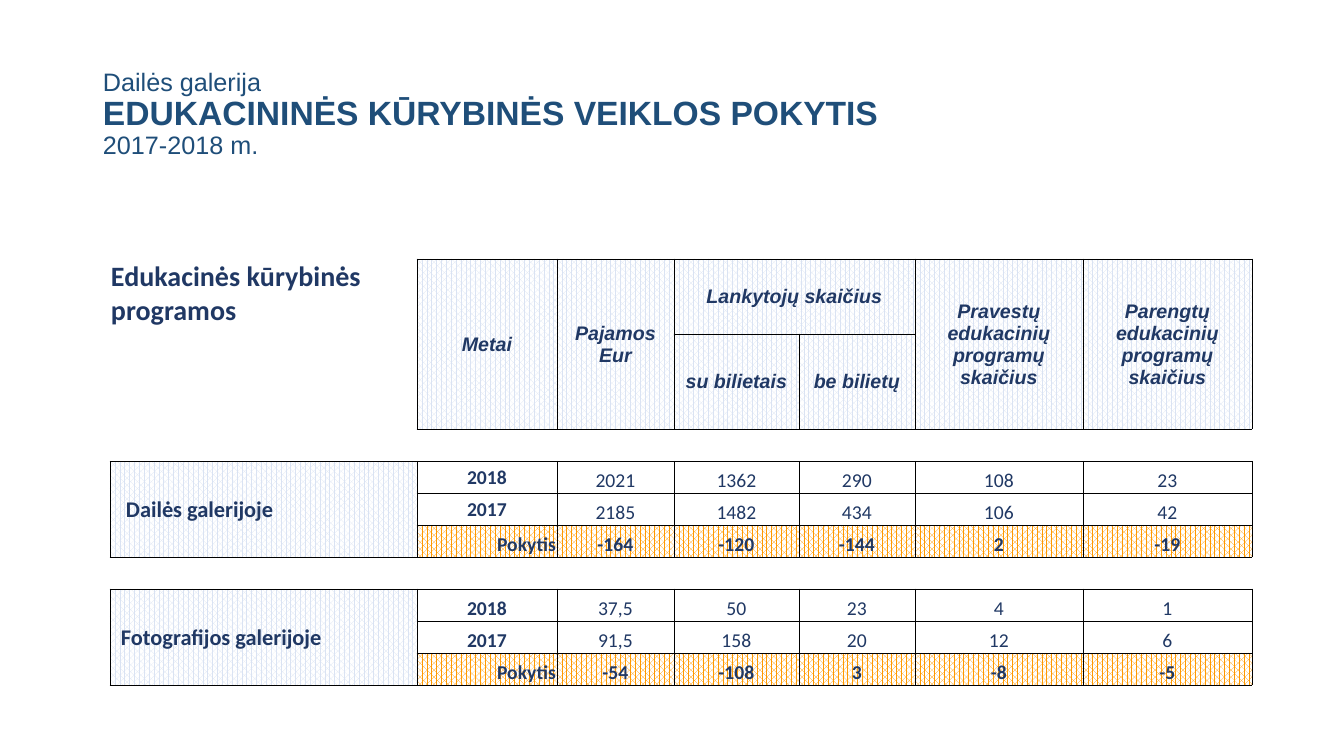
import dataclasses

import lxml.etree
import pptx
import pptx.dml.color
import pptx.enum.dml
import pptx.enum.text
import pptx.oxml.ns
import pptx.util

ALIGN = pptx.enum.text.PP_ALIGN
ANCHOR = pptx.enum.text.MSO_ANCHOR


@dataclasses.dataclass(frozen=True)
class Theme:
    heading_font: str = "Arial"
    body_font: str = "Calibri"
    title_color: str = "1F4E79"
    text_color: str = "203864"
    label_pattern: str = "DAE3F3"
    change_pattern: str = "FF9900"
    paper: str = "FFFFFF"
    border: str = "000000"
    border_width: float = 0.5
    title_size: int = 24
    subtitle_size: int = 18
    section_size: int = 20
    gallery_size: int = 16
    cell_size: int = 14


THEME = Theme()

TITLE_LINES = [
    ("Dailės galerija", THEME.subtitle_size, False),
    ("EDUKACININĖS KŪRYBINĖS VEIKLOS POKYTIS", THEME.title_size, True),
    ("2017-2018 m.", THEME.subtitle_size, False),
]
COLUMN_WIDTHS = [307, 140, 117, 125, 116, 168, 169]
ROW_HEIGHTS = [75, 49] + [32] * 8

# Row, column, last row, last column, text
HEADERS = [
    (0, 1, 1, 1, "Metai"),
    (0, 2, 1, 2, "Pajamos\nEur"),
    (0, 3, 0, 4, "Lankytojų skaičius"),
    (1, 3, 1, 3, "su bilietais"),
    (1, 4, 1, 4, "be bilietų"),
    (0, 5, 1, 5, "Pravestų edukacinių programų skaičius"),
    (0, 6, 1, 6, "Parengtų edukacinių programų skaičius"),
]

# First row, name, indent, anchor of the years, rows
GALLERIES = [
    (3, "Dailės galerijoje", 16, ANCHOR.MIDDLE, [
        ["2018", "2021", "1362", "290", "108", "23"],
        ["2017", "2185", "1482", "434", "106", "42"],
        ["Pokytis", "-164", "-120", "-144", "2", "-19"],
    ]),
    (7, "Fotografijos galerijoje", 11, ANCHOR.BOTTOM, [
        ["2018", "37,5", "50", "23", "4", "1"],
        ["2017", "91,5", "158", "20", "12", "6"],
        ["Pokytis", "-54", "-108", "3", "-8", "-5"],
    ]),
]


def px(count):
    return pptx.util.Emu(round(count * 914400 / 100.8))


def rgb(color):
    return pptx.dml.color.RGBColor.from_string(color)


def set_font(font, name, size, color, bold=False, italic=False):
    font.name, font.size = name, pptx.util.Pt(size)
    font.bold, font.italic = bold, italic
    font.color.rgb = rgb(color)


def add_title(page):
    box = page.shapes.add_textbox(px(93), px(50), px(1129), px(115))
    frame = box.text_frame
    frame.word_wrap = True
    frame.vertical_anchor = ANCHOR.BOTTOM
    frame.text = "\n".join(line for line, _, _ in TITLE_LINES)
    for para, (_, size, bold) in zip(frame.paragraphs, TITLE_LINES):
        para.line_spacing = 0.9
        set_font(para.font, THEME.heading_font, size, THEME.title_color, bold)


def set_borders(cell, sides):
    """Rule the sides named by the letters L, R, T, B and clear the others."""
    properties = cell._tc.get_or_add_tcPr()
    for position, side in enumerate("LRTB"):
        line = lxml.etree.Element(pptx.oxml.ns.qn(f"a:ln{side}"))
        line.set("w", str(pptx.util.Pt(THEME.border_width)))
        ruled = side in sides
        fill = lxml.etree.SubElement(
            line, pptx.oxml.ns.qn("a:solidFill" if ruled else "a:noFill"))
        if ruled:
            color = lxml.etree.SubElement(fill, pptx.oxml.ns.qn("a:srgbClr"))
            color.set("val", THEME.border)
        properties.insert(position, line)


def set_pattern(cell, color):
    cell.fill.patterned()
    cell.fill.pattern = pptx.enum.dml.MSO_PATTERN.PERCENT_70
    cell.fill.fore_color.rgb = rgb(color)
    cell.fill.back_color.rgb = rgb(THEME.paper)


def write_cell(cell, text, size=THEME.cell_size, font=THEME.body_font,
               align=ALIGN.CENTER, anchor=ANCHOR.MIDDLE, bold=True,
               italic=False, pattern=None, indent=1):
    cell.text = text
    cell.vertical_anchor = anchor
    cell.margin_left = px(indent)
    if pattern:
        set_pattern(cell, pattern)
    for para in cell.text_frame.paragraphs:
        para.alignment = align
        set_font(para.font, font, size, THEME.text_color, bold, italic)


def sides_of(row, column):
    """Borders of a cell: the corner and the spacer rows stay open."""
    if column == 0 and row < 2:
        return "R"
    if row == 2:
        return "TB" if column else "B"
    return "TB" if row == 6 else "LRTB"


def add_grid(page):
    frame = page.shapes.add_table(
        len(ROW_HEIGHTS), len(COLUMN_WIDTHS), px(110), px(259),
        px(sum(COLUMN_WIDTHS)), px(sum(ROW_HEIGHTS)))
    table = frame.table
    table.first_row = table.horz_banding = False
    for column, width in zip(table.columns, COLUMN_WIDTHS):
        column.width = px(width)
    for index, height in enumerate(ROW_HEIGHTS):
        table.rows[index].height = px(height)
        for column in range(len(COLUMN_WIDTHS)):
            cell = table.cell(index, column)
            cell.margin_left = cell.margin_right = cell.margin_top = px(1)
            cell.margin_bottom = 0
            cell.fill.background()
            set_borders(cell, sides_of(index, column))
    return table


def write_headers(table):
    corner = table.cell(0, 0)
    corner.merge(table.cell(1, 0))
    write_cell(corner, "Edukacinės kūrybinės programos", THEME.section_size,
               align=ALIGN.LEFT, anchor=ANCHOR.TOP)
    for row, column, last_row, last_column, text in HEADERS:
        cell = table.cell(row, column)
        if (row, column) != (last_row, last_column):
            cell.merge(table.cell(last_row, last_column))
        write_cell(cell, text, font=THEME.heading_font, italic=True,
                   pattern=THEME.label_pattern)


def write_gallery(table, first_row, name, indent, year_anchor, rows):
    label = table.cell(first_row, 0)
    label.merge(table.cell(first_row + len(rows) - 1, 0))
    write_cell(label, name, THEME.gallery_size, align=ALIGN.LEFT,
               pattern=THEME.label_pattern, indent=indent)
    for row, values in enumerate(rows, first_row):
        change = values[0] == "Pokytis"
        for column, value in enumerate(values, 1):
            heading = column == 1
            write_cell(
                table.cell(row, column), value,
                align=ALIGN.RIGHT if change and heading else ALIGN.CENTER,
                anchor=year_anchor if heading and not change else ANCHOR.BOTTOM,
                bold=change or heading,
                pattern=THEME.change_pattern if change else None)


def main():
    deck = pptx.Presentation()
    deck.slide_width, deck.slide_height = px(1344), px(756)
    page = deck.slides.add_slide(deck.slide_layouts[6])
    add_title(page)
    table = add_grid(page)
    write_headers(table)
    for gallery in GALLERIES:
        write_gallery(table, *gallery)
    deck.save("out.pptx")


if __name__ == "__main__":
    main()
